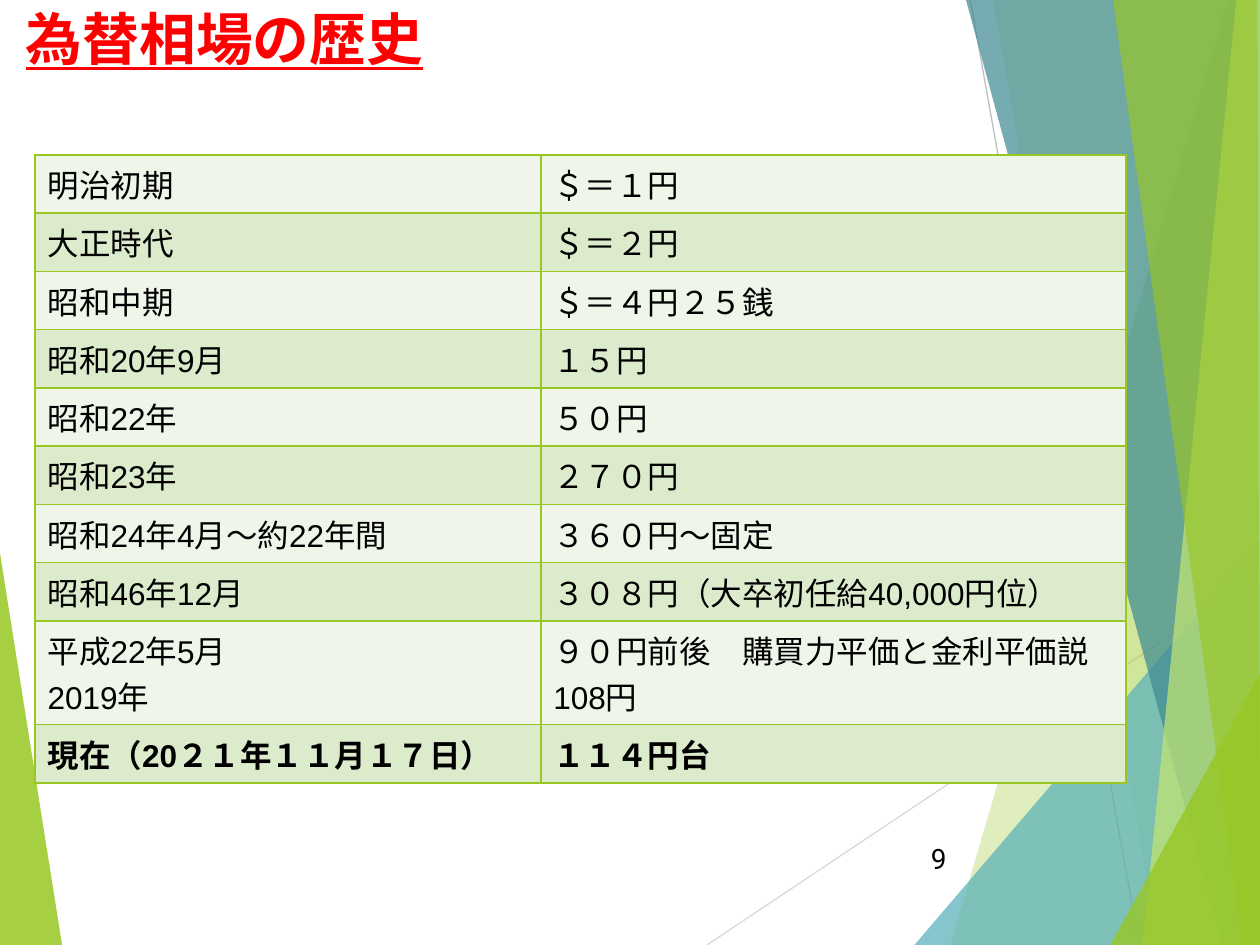
from lxml import etree
from pptx import Presentation
from pptx.dml.color import RGBColor
from pptx.enum.shapes import MSO_CONNECTOR
from pptx.enum.text import MSO_ANCHOR, PP_ALIGN
from pptx.oxml.ns import qn
from pptx.util import Pt

STRAIGHT = MSO_CONNECTOR.STRAIGHT
TOP, MIDDLE = MSO_ANCHOR.TOP, MSO_ANCHOR.MIDDLE
LEFT, RIGHT = PP_ALIGN.LEFT, PP_ALIGN.RIGHT

W, H = 720, 540
COLORS = {
    "green": "98C723", "lime": "C5E672", "aqua": "59B0B9", "teal": "3D8991",
    "pale_line": "D9D9D9", "grey_line": "BFBFBF",
    "light_row": "EFF5E8", "dark_row": "DDEBCD",
    "red": "FF0000", "black": "000000",
}

# Corners, colour and opacity in percent
LEFT_FACET = ([(0, 316), (35.5, H), (0, H)], "green", 85)
RIGHT_FACETS = [
    ([(702, 0), (543, H), (W, H), (W, 0)], "green", 30),
    ([(567.5, 0), (662, H), (W, H), (W, 0)], "green", 20),
    ([(522.5, H), (W, 309), (W, H)], "aqua", 72),
    ([(552, 0), (698.5, H), (W, H), (W, 0)], "teal", 70),
    ([(706.5, 0), (653, H), (W, H), (W, 0)], "lime", 70),
    ([(636, 0), (710, H), (W, H), (718.5, 0)], "green", 65),
    ([(634.5, H), (W, 385), (W, H)], "green", 80),
]
RAYS = [((404, H), (W, 329), "pale_line"), ((554.5, 0), (651, H), "grey_line")]

RATES = [
    ("明治初期", "＄＝１円"),
    ("大正時代", "＄＝２円"),
    ("昭和中期", "＄＝４円２５銭"),
    ("昭和20年9月", "１５円"),
    ("昭和22年", "５０円"),
    ("昭和23年", "２７０円"),
    ("昭和24年4月～約22年間", "３６０円～固定"),
    ("昭和46年12月", "３０８円（大卒初任給40,000円位）"),
    ("平成22年5月\n2019年", "９０円前後　購買力平価と金利平価説\n108円"),
    ("現在（20２１年１１月１７日）", "１１４円台"),
]


def rgb(name):
    return RGBColor.from_string(COLORS[name])


def write(tf, text, size, font="Arial", color="black", bold=False,
          underline=False, align=LEFT):
    """Fill a text frame, one paragraph per line of text."""
    for i, line in enumerate(text.split("\n")):
        p = tf.paragraphs[0] if i == 0 else tf.add_paragraph()
        p.alignment = align
        r = p.add_run()
        r.text = line
        r.font.size, r.font.name = Pt(size), font
        r.font.bold, r.font.underline = bold, underline
        r.font.color.rgb = rgb(color)


def add_text(slide, box, text, anchor=TOP, **fmt):
    tf = slide.shapes.add_textbox(*map(Pt, box)).text_frame
    tf.word_wrap = True
    tf.vertical_anchor = anchor
    tf.margin_top = tf.margin_bottom = 0
    write(tf, text, **fmt)


def add_facet(slide, points, color, opacity):
    """Draw a translucent polygon."""
    start, *rest = [(Pt(x), Pt(y)) for x, y in points]
    builder = slide.shapes.build_freeform(*start)
    builder.add_line_segments(rest, close=True)
    sp = builder.convert_to_shape()
    sp.shadow.inherit = False
    sp.line.fill.background()
    sp.fill.solid()
    sp.fill.fore_color.rgb = rgb(color)
    clr = sp.fill._xPr.find(".//" + qn("a:srgbClr"))
    etree.SubElement(clr, qn("a:alpha"), val=str(opacity * 1000))


def add_ray(slide, start, end, color):
    line = slide.shapes.add_connector(STRAIGHT, *map(Pt, start + end))
    line.line.color.rgb = rgb(color)
    line.line.width = Pt(0.75)
    etree.SubElement(line._element.spPr, qn("a:effectLst"))


def add_borders(cell, color, width):
    tc_pr = cell._tc.get_or_add_tcPr()
    for side in ("lnL", "lnR", "lnT", "lnB"):
        ln = etree.SubElement(tc_pr, qn("a:" + side), w=str(Pt(width)))
        fill = etree.SubElement(ln, qn("a:solidFill"))
        etree.SubElement(fill, qn("a:srgbClr"), val=COLORS[color])


def add_rate_table(slide, left, top, col_widths, row_height):
    frame = slide.shapes.add_table(
        len(RATES), len(col_widths), Pt(left), Pt(top),
        Pt(sum(col_widths)), Pt(row_height * len(RATES)))
    table = frame.table
    table.first_row = table.horz_banding = False
    for col, width in zip(table.columns, col_widths):
        col.width = Pt(width)
    for i, texts in enumerate(RATES):
        table.rows[i].height = Pt(row_height)
        for cell, text in zip(table.rows[i].cells, texts):
            add_borders(cell, "green", 1)
            cell.fill.solid()
            cell.fill.fore_color.rgb = rgb("dark_row" if i % 2 else "light_row")
            write(cell.text_frame, text, 18, bold=i == len(RATES) - 1)


def main():
    prs = Presentation()
    prs.slide_width, prs.slide_height = Pt(W), Pt(H)
    slide = prs.slides.add_slide(prs.slide_layouts[6])
    add_facet(slide, *LEFT_FACET)
    for ray in RAYS:
        add_ray(slide, *ray)
    for facet in RIGHT_FACETS:
        add_facet(slide, *facet)
    add_rate_table(slide, 20, 88.5, (289, 334.5), 29.5)
    add_text(slide, (7.75, 2, 500, 40), "為替相場の歴史", size=32.4,
             font="Roboto", color="red", bold=True, underline=True)
    add_text(slide, (507.5, 476, 40.5, 29), "9", anchor=MIDDLE, size=16,
             font="Roboto", align=RIGHT)
    prs.save("out.pptx")


if __name__ == "__main__":
    main()
